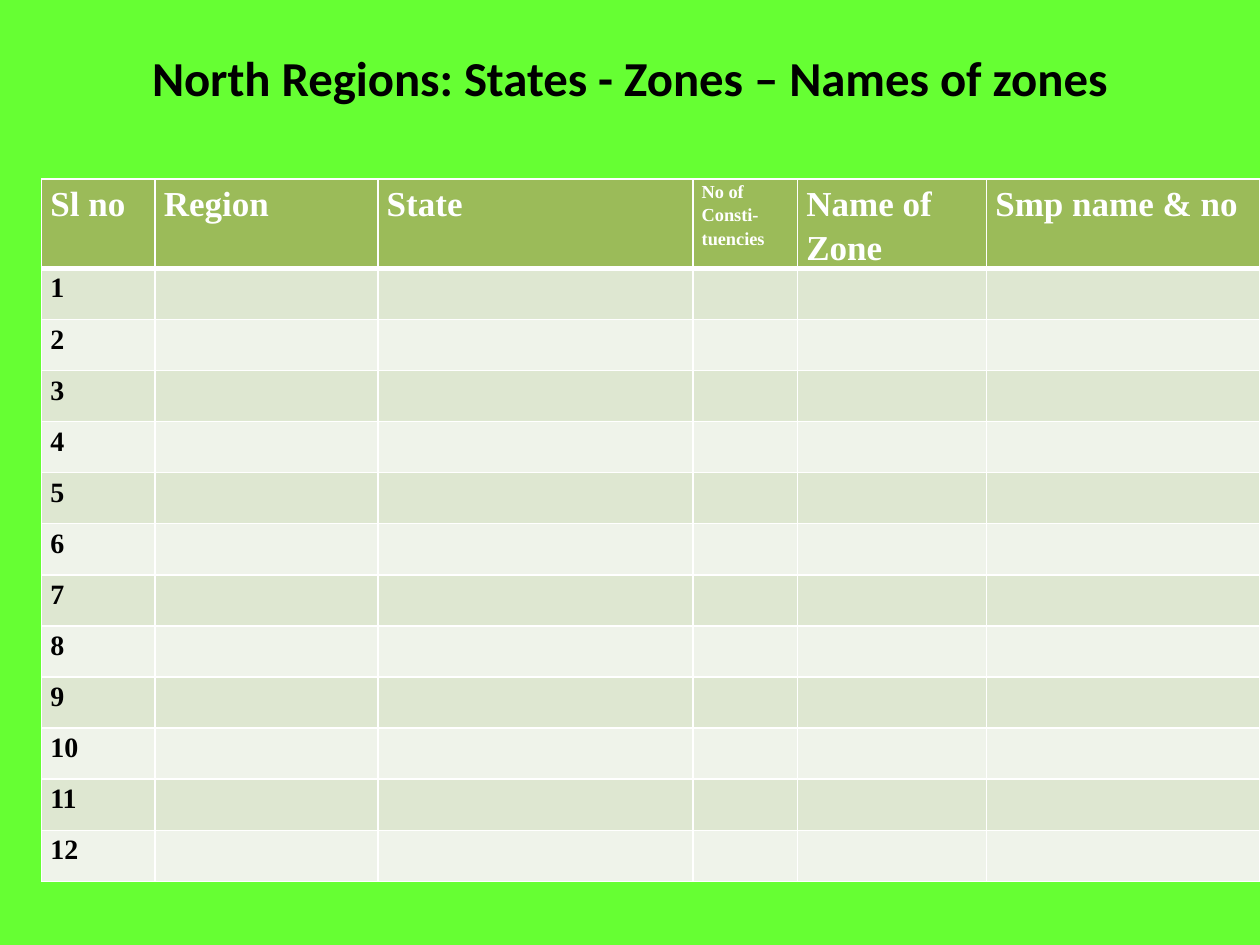
from dataclasses import dataclass

from lxml.etree import SubElement
from pptx import Presentation
from pptx.dml.color import RGBColor as Color
from pptx.enum.text import MSO_ANCHOR as Anchor, PP_ALIGN as Align
from pptx.oxml.ns import qn
from pptx.util import Inches, Pt


@dataclass(frozen=True)
class Theme:
    background: str = "66FF33"
    header: str = "9BBB59"
    bands: tuple = ("DEE7D1", "EFF3EA")
    light: str = "FFFFFF"
    dark: str = "000000"
    title_font: str = "Calibri"
    table_font: str = "Times New Roman"
    title_size: float = 27.9
    header_size: float = 20
    small_size: float = 10.5
    body_size: float = 16
    rule: float = 1
    header_rule: float = 3


class SlideBuilder:
    def __init__(self, deck, theme):
        self.theme = theme
        self.slide = deck.slides.add_slide(deck.slide_layouts[5])
        fill = self.slide.background.fill
        fill.solid()
        fill.fore_color.rgb = Color.from_string(theme.background)

    def style(self, para, font, size, color):
        for span in para.runs:
            span.font.name = font
            span.font.size = Pt(size)
            span.font.bold = True
            span.font.color.rgb = Color.from_string(color)

    def title(self, text, left, top, width, height):
        box = self.slide.shapes.title
        box.left, box.top = Inches(left), Inches(top)
        box.width, box.height = Inches(width), Inches(height)
        frame = box.text_frame
        frame.text = text
        frame.vertical_anchor = Anchor.TOP
        frame.margin_top = Inches(0.08)
        para = frame.paragraphs[0]
        para.alignment = Align.CENTER
        self.style(para, self.theme.title_font, self.theme.title_size, self.theme.dark)

    def borders(self, cell, top, bottom):
        properties = cell._tc.get_or_add_tcPr()
        widths = {"L": self.theme.rule, "R": self.theme.rule, "T": top, "B": bottom}
        for position, (side, width) in enumerate(widths.items()):
            line = SubElement(properties, qn(f"a:ln{side}"), w=str(Pt(width)))
            solid = SubElement(line, qn("a:solidFill"))
            SubElement(solid, qn("a:srgbClr"), val=self.theme.light)
            properties.insert(position, line)  # borders precede the fill

    def cell(self, cell, text, size, color, fill):
        cell.fill.solid()
        cell.fill.fore_color.rgb = Color.from_string(fill)
        cell.margin_left = cell.margin_right = Inches(0.07)
        cell.margin_top = cell.margin_bottom = 0
        cell.text_frame.text = text
        for para in cell.text_frame.paragraphs:
            para.line_spacing = 1.15
            self.style(para, self.theme.table_font, size, color)

    def table(self, headings, rows, left, top, widths, header_height, body_height):
        theme = self.theme
        table = self.slide.shapes.add_table(
            len(rows) + 1, len(headings), Inches(left), Inches(top),
            Inches(sum(widths)), Inches(header_height + body_height)).table
        for column, width in zip(table.columns, widths):
            column.width = Inches(width)
        for row in table.rows:
            row.height = Inches(body_height / len(rows))
        table.rows[0].height = Inches(header_height)

        # Header row
        for column, (text, size) in enumerate(headings):
            cell = table.cell(0, column)
            self.cell(cell, text, size, theme.light, theme.header)
            self.borders(cell, theme.rule, theme.header_rule)

        # Banded body rows
        for index, values in enumerate(rows):
            rule_above = theme.rule if index else theme.header_rule
            for column, text in enumerate(values):
                cell = table.cell(index + 1, column)
                self.cell(cell, text, theme.body_size, theme.dark, theme.bands[index % 2])
                self.borders(cell, rule_above, theme.rule)


def main():
    deck = Presentation()
    deck.slide_width, deck.slide_height = Inches(10), Inches(7.5)
    theme = Theme()
    page = SlideBuilder(deck, theme)
    page.title("North Regions: States - Zones – Names of zones", 0.5, 0.3, 9, 1.25)

    # Blank register of twelve numbered entries
    headings = [
        ("Sl no", theme.header_size),
        ("Region", theme.header_size),
        ("State", theme.header_size),
        ("No of Consti-tuencies", theme.small_size),
        ("Name of\nZone", theme.header_size),
        ("Smp name & no", theme.header_size),
    ]
    rows = [[str(number)] + [""] * (len(headings) - 1) for number in range(1, 13)]
    page.table(headings, rows, 0.33, 1.42, [0.9, 1.77, 2.5, 0.83, 1.5, 2.17], 0.7, 4.87)
    deck.save("out.pptx")


if __name__ == "__main__":
    main()
